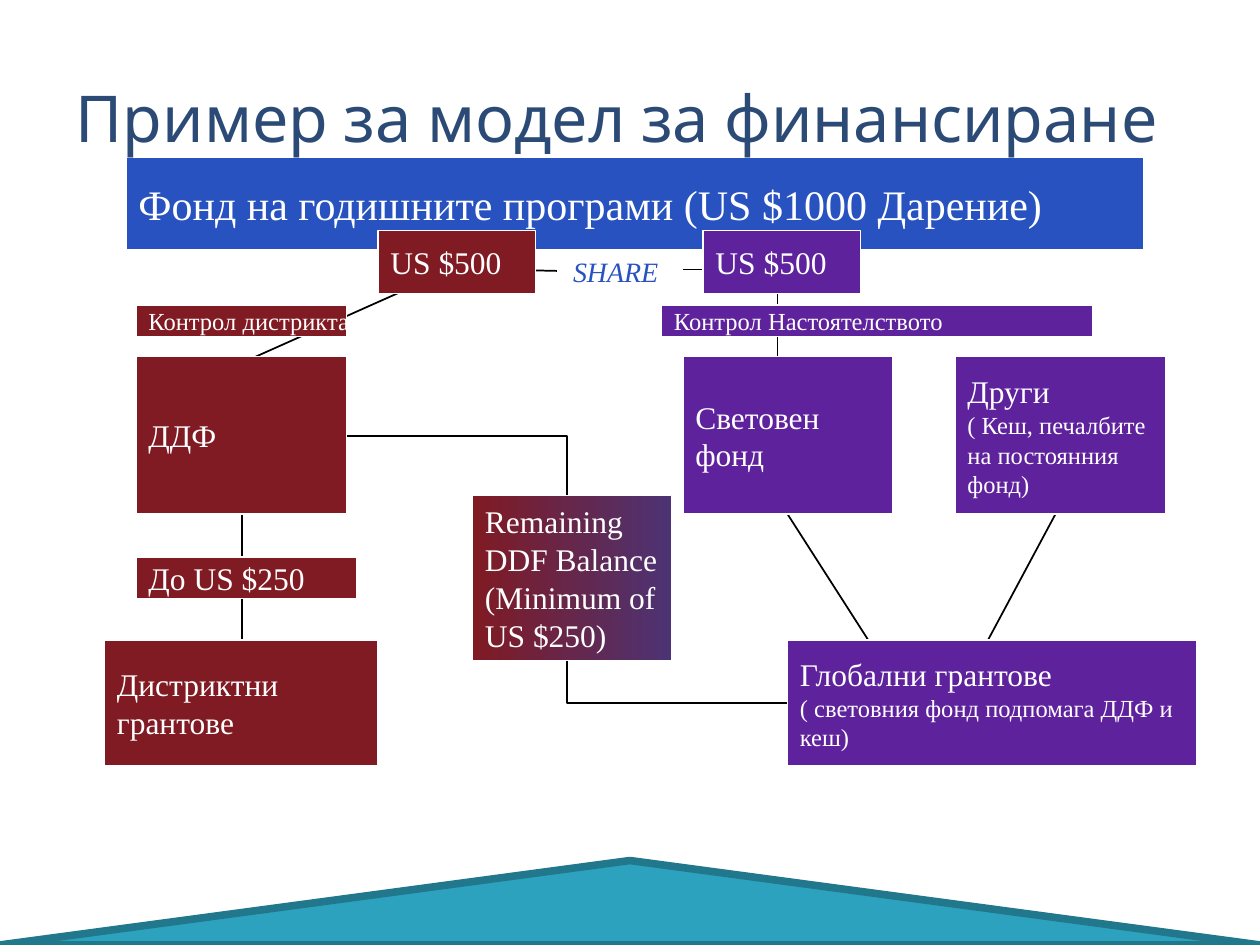
from dataclasses import dataclass

from lxml import etree
from pptx import Presentation
from pptx.dml.color import RGBColor
from pptx.enum.shapes import MSO_CONNECTOR, MSO_SHAPE
from pptx.enum.text import MSO_ANCHOR, MSO_AUTO_SIZE, PP_ALIGN
from pptx.oxml.ns import qn
from pptx.util import Inches, Pt

RECTANGLE, TRIANGLE = MSO_SHAPE.RECTANGLE, MSO_SHAPE.ISOSCELES_TRIANGLE
STRAIGHT, ELBOW = MSO_CONNECTOR.STRAIGHT, MSO_CONNECTOR.ELBOW
MIDDLE, LEFT = MSO_ANCHOR.MIDDLE, PP_ALIGN.LEFT
GROW = MSO_AUTO_SIZE.SHAPE_TO_FIT_TEXT
TITLE_ONLY = 5


@dataclass(frozen=True)
class Theme:
    title_font: str = "Karla"
    body_font: str = "Times New Roman"
    title_color: str = "2B4A76"
    blue: str = "2752C0"
    red: str = "801A23"
    purple: str = "5F229D"
    blend: str = "4C3373"
    teal: str = "2DA2BF"
    teal_edge: str = "21788D"
    white: str = "FFFFFF"
    black: str = "000000"
    title_size: float = 36.9
    banner_size: float = 24
    box_size: float = 18
    share_size: float = 16
    small_size: float = 14


class FundingSlide:
    def __init__(self, prs, theme):
        self.theme = theme
        self.slide = prs.slides.add_slide(prs.slide_layouts[TITLE_ONLY])
        self.shapes = self.slide.shapes

    def format_font(self, run, size, color, name=None, italic=False):
        values = {"name": name or self.theme.body_font, "size": Pt(size),
                  "bold": False, "italic": italic}
        for key, value in values.items():
            setattr(run.font, key, value)
        run.font.color.rgb = RGBColor.from_string(color)

    def fill_text(self, frame, lines, color, italic=False, **frame_format):
        """Put (text, size) lines in a frame, separated by line breaks."""
        for key, value in {"word_wrap": True, **frame_format}.items():
            setattr(frame, key, value)
        paragraph = frame.paragraphs[0]
        paragraph.alignment = LEFT
        for index, (text, size) in enumerate(lines):
            if index:
                paragraph.add_line_break()
            run = paragraph.add_run()
            run.text = text
            self.format_font(run, size, color, italic=italic)

    def shape(self, kind, at, fill, edge, width):
        shape = self.shapes.add_shape(kind, *map(Inches, at))
        shape.shadow.inherit = False
        shape.fill.solid()
        shape.fill.fore_color.rgb = RGBColor.from_string(fill)
        shape.line.color.rgb = RGBColor.from_string(edge)
        shape.line.width = Pt(width)
        return shape

    def box(self, at, fill, *lines, edge_width=1, **frame_format):
        box = self.shape(RECTANGLE, at, fill, self.theme.white, edge_width)
        self.fill_text(box.text_frame, lines, self.theme.white,
                       vertical_anchor=MIDDLE, **frame_format)
        return box

    def blend(self, box, *colors):
        box.fill.gradient()
        box.fill.gradient_angle = 0
        for stop, color, position in zip(box.fill.gradient_stops, colors, (0, 1)):
            stop.color.rgb = RGBColor.from_string(color)
            stop.position = position

    def label(self, at, text, size, color):
        label = self.shapes.add_textbox(*map(Inches, at))
        self.fill_text(label.text_frame, [(text, size)], color,
                       italic=True, auto_size=GROW)

    def line(self, start, end, kind=STRAIGHT, width=1):
        line = self.shapes.add_connector(kind, *map(Inches, start + end))
        line.line.color.rgb = RGBColor.from_string(self.theme.black)
        line.line.width = Pt(width)
        etree.SubElement(line._element.spPr, qn("a:effectLst"))

    def title(self, at, text):
        title = self.shapes.title
        for key, value in zip(("left", "top", "width", "height"), at):
            setattr(title, key, Inches(value))
        frame = title.text_frame
        frame.text = text
        frame.vertical_anchor = MIDDLE
        frame.paragraphs[0].alignment = LEFT
        self.format_font(frame.paragraphs[0].runs[0], self.theme.title_size,
                         self.theme.title_color, self.theme.title_font)
        # The title lies in front of the banner
        self.shapes._spTree.append(title._element)


def main():
    prs = Presentation()
    prs.slide_width, prs.slide_height = Inches(10), Inches(7.5)
    theme = Theme()
    page = FundingSlide(prs, theme)
    red, purple = theme.red, theme.purple
    big, small = theme.box_size, theme.small_size

    # Footer peak
    peak = page.shape(TRIANGLE, (0, 6.83, 10, 0.67), theme.teal, theme.teal_edge, 4.33)
    peak.adjustments[0] = 0.5

    # Links, behind the boxes
    for start, end in (
        ((3.95, 2.14), (4.42, 2.15)),
        ((5.42, 2.14), (6.04, 2.14)),
        ((3.33, 2.25), (1.83, 2.92)),
        ((1.92, 4), (1.92, 5.33)),
        ((6.17, 2.33), (6.17, 3.17)),
        ((6.25, 4.08), (7, 5.25)),
        ((8.42, 4), (7.75, 5.25)),
    ):
        page.line(start, end)
    page.line((2.75, 3.46), (6.25, 5.58), ELBOW, 1.25)

    # Annual fund banner and its even split
    page.box((1, 1.25, 8.08, 0.73), theme.blue,
             ("Фонд на годишните програми (US $1000 Дарение)", theme.banner_size))
    page.label((4.45, 1.97, 0.97, 0.37), "SHARE", theme.share_size, theme.blue)
    for left, color in ((3, red), (5.58, purple)):
        page.box((left, 1.83, 1.25, 0.5), color, ("US $500", big))

    # Who controls each half
    page.box((1.08, 2.42, 1.67, 0.25), red, ("Контрол дистрикта", small),
             edge_width=0.75, word_wrap=False)
    page.box((5.25, 2.42, 3.42, 0.25), purple, ("Контрол Настоятелството", small))

    # Funds
    for left, color, lines in (
        (1.08, red, [("ДДФ", big)]),
        (5.42, purple, [("Световен фонд", big)]),
        (7.58, purple, [("Други", big), ("( Кеш, печалбите на постоянния фонд)", small)]),
    ):
        page.box((left, 2.83, 1.67, 1.25), color, *lines)

    # Amounts passed on
    page.box((1.08, 4.42, 1.75, 0.33), red, ("До US $250", big),
             edge_width=0.75, word_wrap=False)
    balance = page.box((3.75, 3.93, 1.58, 1.31), red,
                       ("Remaining DDF Balance (Minimum of US $250)", big),
                       edge_width=0.75, auto_size=GROW)
    page.blend(balance, red, theme.blend)

    # Grants
    page.box((0.83, 5.08, 2.17, 1), red, ("Дистриктни грантове", big))
    page.box((6.25, 5.08, 3.25, 1), purple, ("Глобални грантове", big),
             ("( световния фонд подпомага ДДФ и кеш)", small))

    page.title((0.5, 0.3, 9, 1.25), "Пример за модел за финансиране")
    prs.save("out.pptx")


if __name__ == "__main__":
    main()
